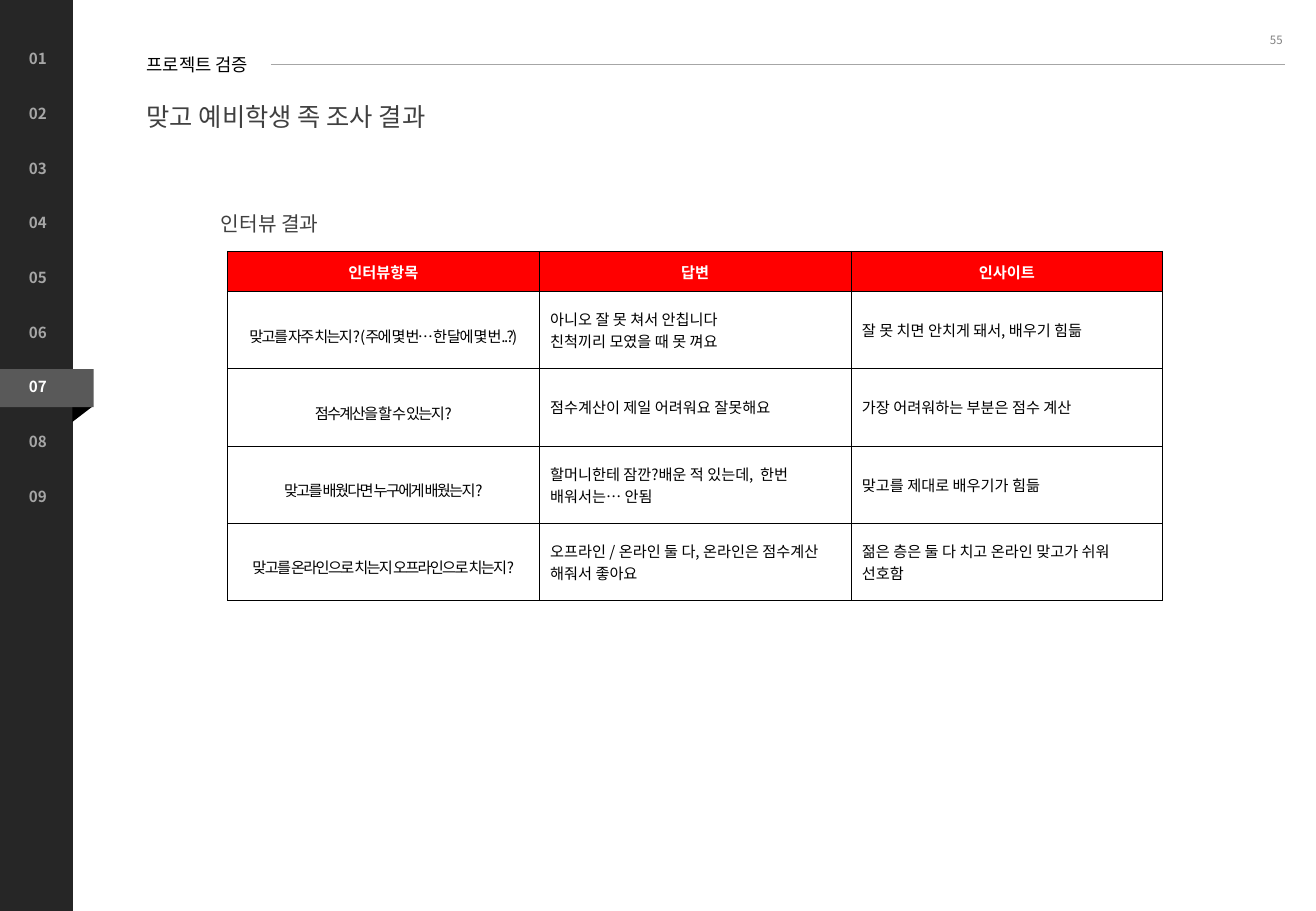
from pptx import Presentation
from pptx.dml.color import RGBColor
from pptx.enum.shapes import MSO_CONNECTOR as LINE, MSO_SHAPE as SHAPE
from pptx.enum.text import MSO_ANCHOR as ANCHOR, MSO_AUTO_SIZE as FIT, PP_ALIGN as ALIGN
from pptx.oxml.ns import qn
from pptx.util import Pt
from lxml.etree import SubElement

FONT = "Noto Sans CJK KR"
COLORS = {
    "bar": "262626", "tab": "595959", "black": "000000", "white": "FFFFFF",
    "dim": "A6A6A6", "page": "808080", "title": "404040", "head": "FF0000",
}
HEADS = ["인터뷰항목", "답변", "인사이트"]
ROWS = [
    ["맞고를 자주 치는지? (주에 몇 번… 한 달에 몇 번..?)",
     "아니오 잘 못 쳐서 안칩니다\n친척끼리 모였을 때 못 껴요",
     "잘 못 치면 안치게 돼서, 배우기 힘듦"],
    ["점수계산을 할 수 있는지?",
     "점수계산이 제일 어려워요 잘못해요",
     "가장 어려워하는 부분은 점수 계산"],
    ["맞고를 배웠다면 누구에게 배웠는지?",
     "할머니한테 잠깐?배운 적 있는데,  한번 배워서는… 안됨",
     "맞고를 제대로 배우기가 힘듦"],
    ["맞고를 온라인으로 치는지 오프라인으로 치는지?",
     "오프라인 / 온라인 둘 다, 온라인은 점수계산 해줘서 좋아요",
     "젊은 층은 둘 다 치고 온라인 맞고가 쉬워\n선호함"],
]


def rgb(name):
    return RGBColor.from_string(COLORS[name])


def write(frame, text, size=9, color="black", bold=False, align=ALIGN.LEFT,
          anchor=ANCHOR.TOP, pad=(7.2, 3.6), lead=None, track=0, wrap=True):
    """Fill a text frame or a table cell with formatted text."""
    frame.margin_left = frame.margin_right = Pt(pad[0])
    frame.margin_top = frame.margin_bottom = Pt(pad[1])
    frame.vertical_anchor = anchor
    body = getattr(frame, "text_frame", frame)
    body.text = text
    if body is frame:
        body.word_wrap = wrap
        body.auto_size = FIT.NONE
    for par in body.paragraphs:
        par.alignment = align
        par.line_spacing = lead
        for run in par.runs:
            font = run.font
            font.size, font.bold, font.name = Pt(size), bold, FONT
            font.color.rgb = rgb(color)
            props = run._r.get_or_add_rPr()
            SubElement(props, qn("a:ea"), typeface=FONT)
            if track:
                props.set("spc", str(track * 100))


def label(slide, text, box, **form):
    shape = slide.shapes.add_textbox(*map(Pt, box))
    write(shape.text_frame, text, **form)


def block(slide, kind, box, color, turn=0):
    shape = slide.shapes.add_shape(kind, *map(Pt, box))
    shape.shadow.inherit = False
    shape.fill.solid()
    shape.fill.fore_color.rgb = rgb(color)
    shape.line.fill.background()
    shape.rotation = turn


def side_bar(slide, left, top, width, height, active=7):
    step = 32.4
    block(slide, SHAPE.RECTANGLE, (left, top, width, height), "bar")
    # Folded tab behind the active number
    mark = top + 25.9 + step * (active - 1)
    block(slide, SHAPE.ISOSCELES_TRIANGLE,
          (left + width - 3.6, mark + 14.4, 18.7, 12.2), "black", turn=90)
    block(slide, SHAPE.RECTANGLE, (left, mark - 1.4, width + 12.3, 22.5), "tab")
    # Chapter numbers
    for num in range(1, 10):
        label(slide, f"{num:02}", (left + 10.1, top + 25.9 + step * (num - 1), 36.7, 18),
              bold=True, color="white" if num == active else "dim")


def header(slide, left, top, width):
    label(slide, "55", (left + width - 170, top - 20.9, 175.7, 28.8), size=6.8,
          color="page", align=ALIGN.RIGHT, anchor=ANCHOR.MIDDLE)
    label(slide, "프로젝트 검증", (left, top, 117.4, 17.3), size=10.5,
          pad=(5, 2.9), lead=0.9)
    # Rule beside the section name
    rule = slide.shapes.add_connector(
        LINE.STRAIGHT, Pt(left + 78.5), Pt(top + 7.7), Pt(left + width), Pt(top + 7.7))
    rule.line.color.rgb = rgb("dim")
    rule.line.width = Pt(0.5)
    SubElement(rule._element.spPr, qn("a:effectLst"))
    # Slide title
    title = slide.shapes.title
    title.left, title.top = Pt(left + 5), Pt(top + 24.5)
    title.width, title.height = Pt(177), Pt(23)
    write(title.text_frame, "맞고 예비학생 족 조사 결과", size=15, color="title",
          pad=(0, 0), lead=Pt(23.2), wrap=False)


def border(cell):
    props = cell._tc.get_or_add_tcPr()
    for side in ("lnL", "lnR", "lnT", "lnB"):
        edge = SubElement(props, qn(f"a:{side}"), w=str(Pt(0.5)))
        fill = SubElement(edge, qn("a:solidFill"))
        SubElement(fill, qn("a:srgbClr"), val=COLORS["black"])


def results(slide, left, top, width, height):
    label(slide, "인터뷰 결과", (left - 3.8, top - 32.4, 61.2, 23), size=12,
          color="title", pad=(0, 0), lead=Pt(23.2), wrap=False)
    data = [HEADS] + ROWS
    table = slide.shapes.add_table(
        len(data), len(HEADS), *map(Pt, (left, top, width, height))).table
    table.horz_banding = False
    head = 23.9
    for col in table.columns:
        col.width = Pt(width / len(HEADS))
    for i, row in enumerate(table.rows):
        row.height = Pt((height - head) / len(ROWS) if i else head)
    # Cells: red head, tight centred questions, plain answers
    for i, texts in enumerate(data):
        for j, text in enumerate(texts):
            cell = table.cell(i, j)
            if i == 0:
                form = dict(color="white", bold=True, align=ALIGN.CENTER, pad=(6.5, 5))
            elif j == 0:
                form = dict(align=ALIGN.CENTER, pad=(7.2, 0), lead=1.5, track=-1)
            else:
                form = dict(pad=(6.5, 6.5))
            write(cell, text, anchor=ANCHOR.MIDDLE, **form)
            border(cell)
            cell.fill.solid()
            cell.fill.fore_color.rgb = rgb("white" if i else "head")


def main():
    deck = Presentation()
    deck.slide_width, deck.slide_height = Pt(780), Pt(540)
    slide = deck.slides.add_slide(deck.slide_layouts[5])
    side_bar(slide, 0, 0, 43.2, 540)
    header(slide, 82, 30.2, 679.7)
    results(slide, 134.8, 149, 554.4, 206.8)
    deck.save("out.pptx")


if __name__ == "__main__":
    main()
